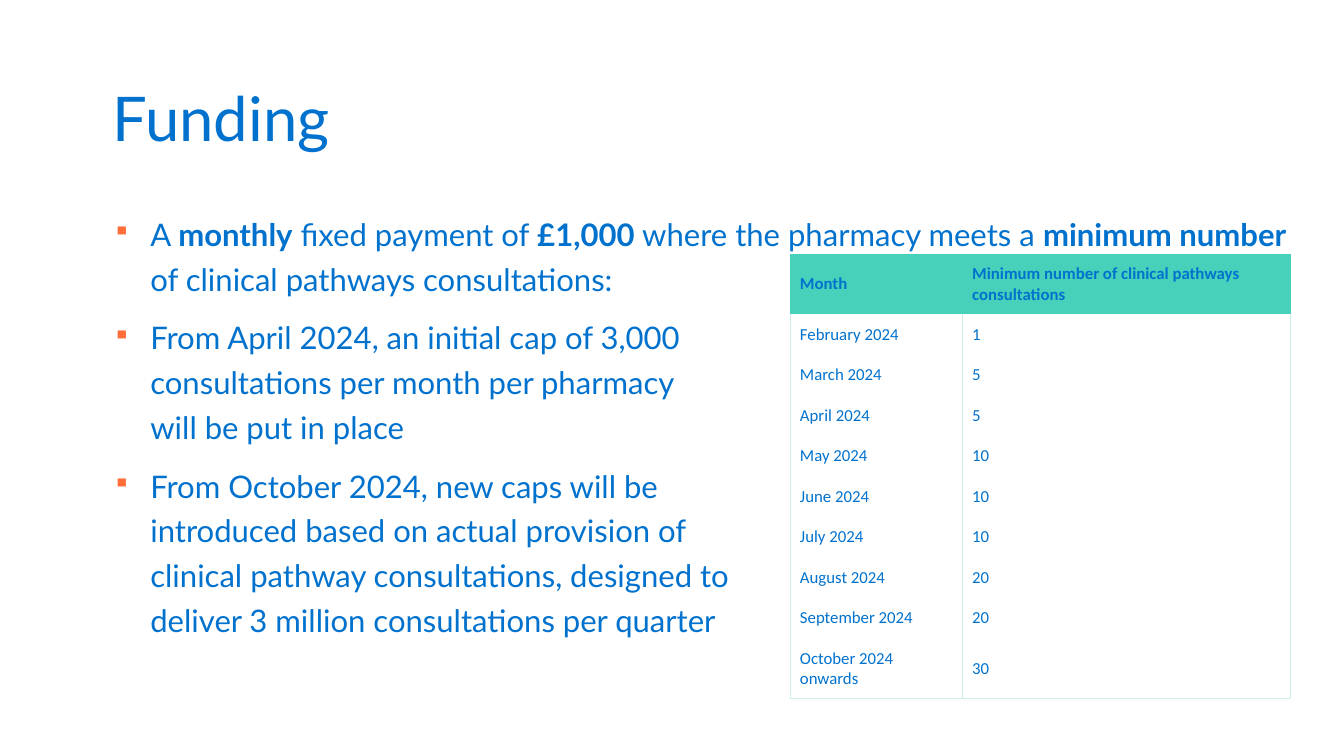
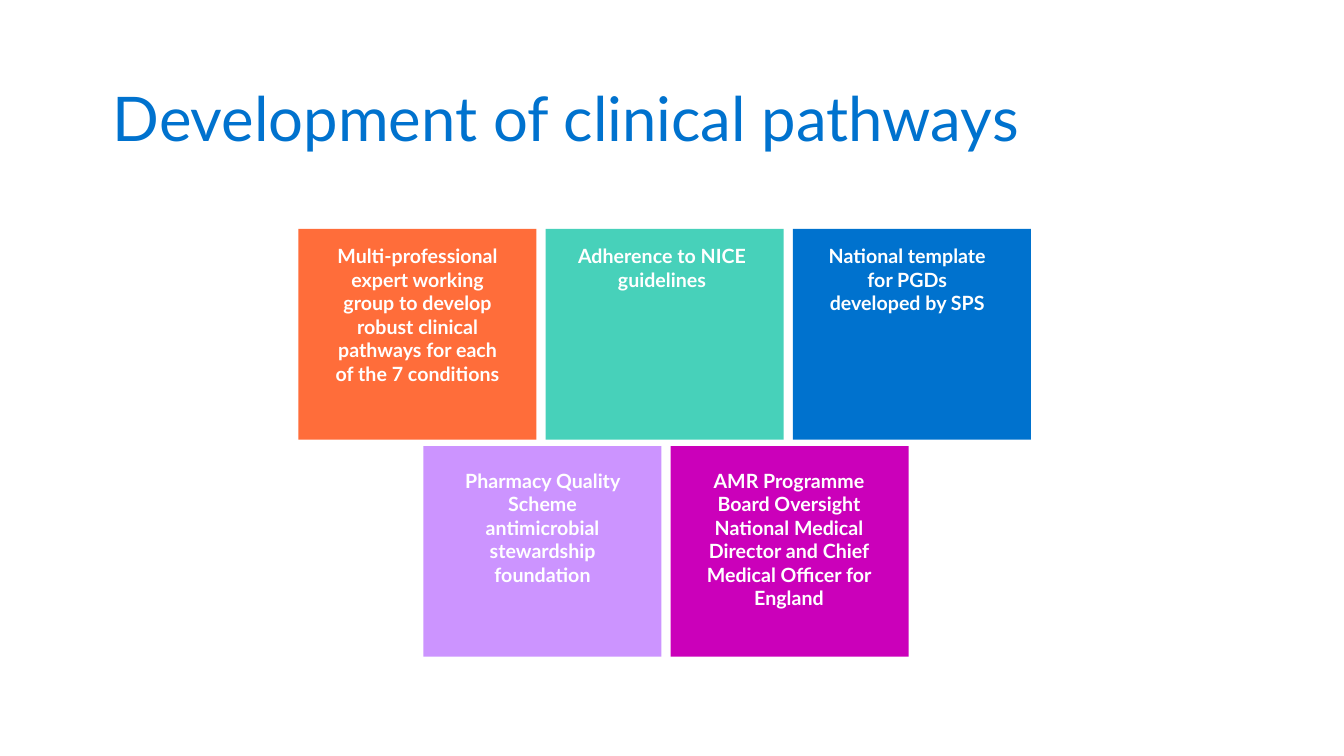
"""Build two slides on pharmacy funding and clinical pathways."""

from typing import NamedTuple

from lxml import etree
from pptx import Presentation
from pptx.dml.color import RGBColor
from pptx.enum.shapes import MSO_SHAPE
from pptx.enum.text import MSO_ANCHOR, PP_ALIGN
from pptx.oxml.ns import qn
from pptx.presentation import Presentation as Deck
from pptx.slide import Slide
from pptx.table import _Cell as Cell
from pptx.text.text import TextFrame, _Paragraph as Paragraph
from pptx.util import Cm, Pt

RECTANGLE = MSO_SHAPE.RECTANGLE
TOP, MIDDLE = MSO_ANCHOR.TOP, MSO_ANCHOR.MIDDLE
LEFT, CENTER = PP_ALIGN.LEFT, PP_ALIGN.CENTER

COLOURS = {
    "blue": "0072CE",
    "orange": "FF6D3A",
    "teal": "47D1BA",
    "lilac": "CC94FF",
    "magenta": "CB00BA",
    "white": "FFFFFF",
    "grid": "D0EFE9",
}
HEADING_FONT = "Lato"
TABLE_FONT = "Calibri"
BLANK_LAYOUT = 6

MARGIN = 2.59
TILE_WIDTH, TILE_HEIGHT = 6.0, 5.31
TILE_PITCH = 6.23
LABEL_WIDTH = 4.39
CELL_INSET = 0.25


class Span(NamedTuple):
    """A stretch of text with one weight."""

    text: str
    bold: bool = False


class Tile(NamedTuple):
    """A coloured box and the left inset of its label."""

    text: str
    colour: str
    inset: float


class TileRow(NamedTuple):
    """A row of tiles with its place and the top inset of its labels."""

    left: float
    top: float
    inset: float
    tiles: tuple[Tile, ...]


BULLETS = (
    (
        Span("A "),
        Span("monthly", True),
        Span(" fixed payment of "),
        Span("£1,000 ", True),
        Span("where the pharmacy meets a "),
        Span("minimum number ", True),
        Span("of clinical pathways consultations:"),
    ),
    (
        Span(
            "From April 2024, an initial cap of 3,000\n"
            "consultations per month per pharmacy\n"
            "will be put in place"
        ),
    ),
    (
        Span(
            "From October 2024, new caps will be\n"
            "introduced based on actual provision of\n"
            "clinical pathway consultations, designed to\n"
            "deliver 3 million consultations per quarter"
        ),
    ),
)

MINIMUM_CONSULTATIONS = (
    ("Month", "Minimum number of clinical pathways consultations"),
    ("February 2024", "1"),
    ("March 2024", "5"),
    ("April 2024", "5"),
    ("May 2024", "10"),
    ("June 2024", "10"),
    ("July 2024", "10"),
    ("August 2024", "20"),
    ("September 2024", "20"),
    ("October 2024 onwards", "30"),
)
COLUMN_WIDTHS = (4.34, 8.28)
ROW_HEIGHTS = (1.52,) + (1.02,) * 8 + (1.52,)

TILE_ROWS = (
    TileRow(7.52, 5.77, 0.38, (
        Tile("Multi-professional expert working group to develop robust "
             "clinical pathways for each of the 7 conditions", "orange", 0.81),
        Tile("Adherence to NICE guidelines", "teal", 0.74),
        Tile("National template for PGDs developed by SPS", "blue", 0.69),
    )),
    TileRow(10.67, 11.24, 0.57, (
        Tile("Pharmacy Quality Scheme antimicrobial stewardship foundation",
             "lilac", 0.81),
        Tile("AMR Programme Board Oversight National Medical Director and "
             "Chief Medical Officer for England", "magenta", 0.79),
    )),
)


def rgb(name: str) -> RGBColor:
    """Return a named colour."""
    return RGBColor.from_string(COLOURS[name])


def write(paragraph: Paragraph, text: str, *, size: float, colour: str = "blue",
          font: str = HEADING_FONT, bold: bool = False, align: PP_ALIGN = LEFT) -> None:
    """Append formatted text, turning newlines into line breaks."""
    paragraph.alignment = align
    for index, line in enumerate(text.split("\n")):
        if index:
            paragraph.add_line_break()
        span = paragraph.add_run()
        span.text = line
        span.font.name = font
        span.font.size = Pt(size)
        span.font.bold = bold
        span.font.color.rgb = rgb(colour)


def add_text_box(slide: Slide, left: float, top: float, width: float, height: float,
                 *, anchor: MSO_ANCHOR = TOP) -> TextFrame:
    """Add a wrapping text box and return its frame."""
    box = slide.shapes.add_textbox(Cm(left), Cm(top), Cm(width), Cm(height))
    frame = box.text_frame
    frame.word_wrap = True
    frame.vertical_anchor = anchor
    return frame


def add_titled_slide(deck: Deck, title: str) -> Slide:
    """Add a blank slide with the shared title style."""
    slide = deck.slides.add_slide(deck.slide_layouts[BLANK_LAYOUT])
    frame = add_text_box(slide, MARGIN, 1.02, 28.93, 3.68, anchor=MIDDLE)
    paragraph = frame.paragraphs[0]
    paragraph.line_spacing = 1.1
    write(paragraph, title, size=44)
    return slide


def set_bullet(paragraph: Paragraph) -> None:
    """Give a paragraph a small orange square and a hanging indent."""
    properties = paragraph._p.get_or_add_pPr()
    properties.set("marL", str(Cm(0.95)))
    properties.set("indent", str(-Cm(0.95)))
    colour = etree.SubElement(properties, qn("a:buClr"))
    etree.SubElement(colour, qn("a:srgbClr"), val=COLOURS["orange"])
    etree.SubElement(properties, qn("a:buSzPct"), val="80000")
    etree.SubElement(properties, qn("a:buChar"), char="▪")


def add_bullets(slide: Slide) -> None:
    """Add the funding bullets."""
    frame = add_text_box(slide, MARGIN, 5.11, 30.33, 11.23)
    for index, spans in enumerate(BULLETS):
        paragraph = frame.add_paragraph() if index else frame.paragraphs[0]
        set_bullet(paragraph)
        paragraph.line_spacing = 1.2
        paragraph.space_before = Pt(10 if index else 0)
        for span in spans:
            write(paragraph, span.text, size=22.2, bold=span.bold)


def set_borders(cell: Cell, *, visible: bool) -> None:
    """Draw thin cell borders, or remove them."""
    properties = cell._tc.get_or_add_tcPr()
    for index, side in enumerate(("lnL", "lnR", "lnT", "lnB")):
        line = etree.Element(qn(f"a:{side}"), w=str(Pt(0.75)))
        if visible and side != "lnT":
            fill = etree.SubElement(line, qn("a:solidFill"))
            etree.SubElement(fill, qn("a:srgbClr"), val=COLOURS["grid"])
        else:
            etree.SubElement(line, qn("a:noFill"))
        properties.insert(index, line)


def fill_cell(cell: Cell, text: str, *, header: bool) -> None:
    """Fill and format one table cell."""
    cell.vertical_anchor = MIDDLE
    cell.margin_left = cell.margin_right = Cm(CELL_INSET)
    cell.margin_top = cell.margin_bottom = Cm(CELL_INSET)
    if header:
        cell.fill.solid()
        cell.fill.fore_color.rgb = rgb("teal")
    else:
        cell.fill.background()
    set_borders(cell, visible=not header)
    write(cell.text_frame.paragraphs[0], text, size=12, font=TABLE_FONT, bold=header)


def add_consultation_table(slide: Slide) -> None:
    """Add the table of monthly minimum consultations."""
    frame = slide.shapes.add_table(
        len(ROW_HEIGHTS), len(COLUMN_WIDTHS), Cm(19.91), Cm(6.4),
        Cm(sum(COLUMN_WIDTHS)), Cm(sum(ROW_HEIGHTS)),
    )
    table = frame.table
    table.horz_banding = False
    for column, width in zip(table.columns, COLUMN_WIDTHS):
        column.width = Cm(width)
    for index, (row, height) in enumerate(zip(table.rows, ROW_HEIGHTS)):
        row.height = Cm(height)
        for cell, text in zip(row.cells, MINIMUM_CONSULTATIONS[index]):
            fill_cell(cell, text, header=index == 0)


def add_tile(slide: Slide, tile: Tile, left: float, top: float, inset: float) -> None:
    """Add one coloured tile with its label."""
    box = slide.shapes.add_shape(
        RECTANGLE, Cm(left), Cm(top), Cm(TILE_WIDTH), Cm(TILE_HEIGHT))
    box.shadow.inherit = False
    box.fill.solid()
    box.fill.fore_color.rgb = rgb(tile.colour)
    box.line.fill.background()
    frame = box.text_frame
    frame.word_wrap = True
    frame.vertical_anchor = TOP
    frame.margin_top = Cm(inset)
    frame.margin_left = Cm(tile.inset)
    frame.margin_right = Cm(TILE_WIDTH - LABEL_WIDTH - tile.inset)
    write(frame.paragraphs[0], tile.text, size=14, colour="white", bold=True,
          align=CENTER)


def build_funding(deck: Deck) -> None:
    """Build the funding slide."""
    slide = add_titled_slide(deck, "Funding")
    add_bullets(slide)
    add_consultation_table(slide)


def build_development(deck: Deck) -> None:
    """Build the slide on how the pathways were developed."""
    slide = add_titled_slide(deck, "Development of clinical pathways")
    for row in TILE_ROWS:
        for index, tile in enumerate(row.tiles):
            add_tile(slide, tile, row.left + index * TILE_PITCH, row.top, row.inset)


def main() -> None:
    """Build and save the deck."""
    deck = Presentation()
    deck.slide_width, deck.slide_height = Cm(33.87), Cm(19.05)
    build_funding(deck)
    build_development(deck)
    deck.save("out.pptx")


if __name__ == "__main__":
    main()
